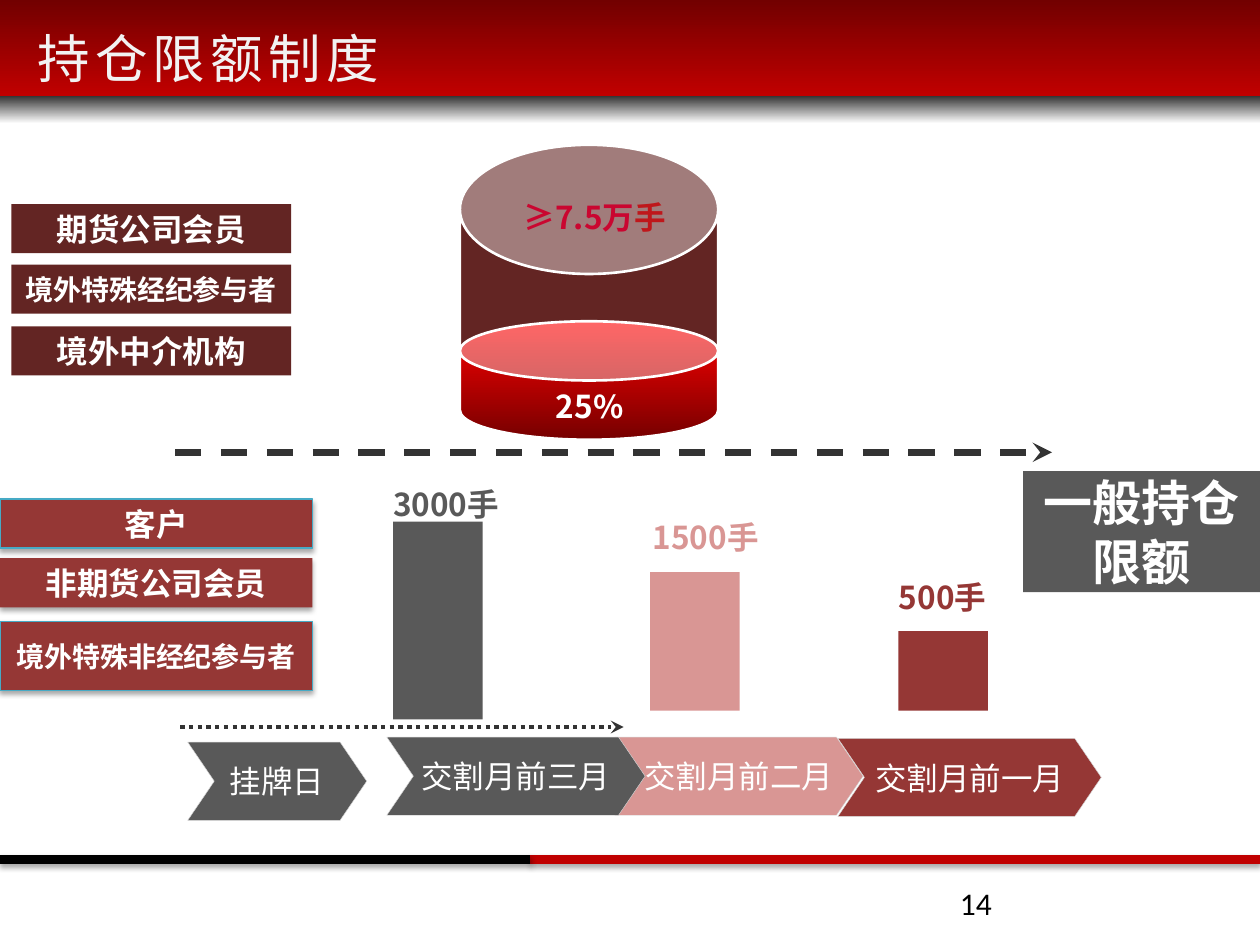
from lxml import etree
from pptx import Presentation
from pptx.dml.color import RGBColor
from pptx.enum import dml, lang, shapes, text
from pptx.oxml import parse_xml
from pptx.oxml.ns import nsdecls, qn
from pptx.util import Inches, Pt

WHITE = RGBColor(0xFF, 0xFF, 0xFF)
BLACK = RGBColor(0, 0, 0)
CHARCOAL = RGBColor(0x33, 0x33, 0x33)
GRAY = RGBColor(0x59, 0x59, 0x59)
SILVER = RGBColor(0xD7, 0xD7, 0xD7)
PALE = RGBColor(0xF2, 0xF2, 0xF2)
RED = RGBColor(0xC0, 0, 0)
BRIGHT_RED = RGBColor(0xFF, 0, 0)
DEEP_RED = RGBColor(0x72, 0, 0)
CAN_RED = RGBColor(0x76, 0, 0)
CRIMSON = RGBColor(0xCA, 0x06, 0x30)
SCARLET = RGBColor(0xBF, 0x17, 0x1B)
MAROON = RGBColor(0x63, 0x25, 0x23)
BRICK = RGBColor(0x95, 0x37, 0x35)
PINK = RGBColor(0xD9, 0x96, 0x94)
TEAL = RGBColor(0x46, 0xAA, 0xC5)
CJK = "Noto Sans CJK SC"
KIND = shapes.MSO_SHAPE
SHADOW = (f'<a:effectLst {nsdecls("a")}><a:outerShdw blurRad="39370" dist="22860" dir="5400000">'
          '<a:srgbClr val="000000"><a:alpha val="35000"/></a:srgbClr></a:outerShdw></a:effectLst>')

prs = Presentation()
prs.slide_width, prs.slide_height = Inches(10), Inches(7.5)
s = prs.slides.add_slide(prs.slide_layouts[6])


def add_box(at, fill, kind=KIND.RECTANGLE, line=None, width=0.75, adj=None, shadow=False):
    """Add a shape; a pair of colours as fill makes a top-to-bottom gradient."""
    sp = s.shapes.add_shape(kind, *map(Inches, at))
    if isinstance(fill, list):
        sp.fill.gradient()
        sp.fill.gradient_angle = 270
        for stop, color in zip(sp.fill.gradient_stops, fill):
            stop.color.rgb = color
    else:
        sp.fill.solid()
        sp.fill.fore_color.rgb = fill
    if line is None:
        sp.line.fill.background()
    else:
        sp.line.color.rgb = line
        sp.line.width = Pt(width)
    if adj is not None:
        sp.adjustments[0] = adj
    if shadow:
        sp._element.spPr.append(parse_xml(SHADOW))
    else:
        sp.shadow.inherit = False
    return sp


def add_text(runs, sp=None, at=None, size=18, bold=False, font=CJK, inset=0.1,
             align=text.PP_ALIGN.CENTER, spacing=None):
    """Write (text, colour) runs into a shape, or into a new text box at the given place."""
    if sp is None:
        sp = s.shapes.add_textbox(*map(Inches, at))
    tf = sp.text_frame
    tf.word_wrap = True
    tf.margin_left = tf.margin_right = Inches(inset)
    p = tf.paragraphs[0]
    p.alignment = align
    for words, color in runs:
        r = p.add_run()
        r.text = words
        r.font.size, r.font.bold, r.font.name = Pt(size), bold, font
        r.font.color.rgb = color
        r.font.language_id = lang.MSO_LANGUAGE_ID.SIMPLIFIED_CHINESE
        rPr = r.font._element
        ea = etree.Element(qn("a:ea"), typeface=font)
        rPr.find(qn("a:latin")).addnext(ea)
        if spacing:
            rPr.set("spc", str(spacing * 100))


# Header band and page number
add_box((0, 0.76, 10, 0.22), [CHARCOAL, WHITE])
add_box((0, 0, 10, 0.76), [DEEP_RED, RED])
add_text([("持仓限额制度", PALE)], at=(0.2, 0.16, 8.3, 0.84), size=30,
         align=text.PP_ALIGN.LEFT, spacing=3)
add_text([("14", BLACK)], at=(7.52, 6.97, 2.33, 0.4), font="Calibri", align=text.PP_ALIGN.LEFT)

# Footer rules and timeline arrows
DASH = dml.MSO_LINE
for x1, x2, y, color, width, dash in [
    (4.21, 10, 6.82, RED, 5, None),
    (0, 4.21, 6.82, BLACK, 5, None),
    (1.43, 4.95, 5.77, CHARCOAL, 2.5, DASH.ROUND_DOT),
    (1.39, 8.35, 3.59, CHARCOAL, 3.75, DASH.DASH),
]:
    cn = s.shapes.add_connector(shapes.MSO_CONNECTOR.STRAIGHT,
                                Inches(x1), Inches(y), Inches(x2), Inches(y))
    cn.line.color.rgb = color
    cn.line.width = Pt(width)
    if dash:
        cn.line.dash_style = dash
        etree.SubElement(cn.line._get_or_add_ln(), qn("a:tailEnd"), type="stealth")
        cn._element.spPr.append(parse_xml(f'<a:effectLst {nsdecls("a")}/>'))
    else:
        cn._element.spPr.append(parse_xml(SHADOW))

# Delivery stages
for label, x, y, w, color in [
    ("交割月前一月", 6.65, 5.86, 2.09, BRICK),
    ("交割月前二月", 4.88, 5.85, 1.97, PINK),
    ("交割月前三月", 3.07, 5.85, 2.05, GRAY),
    ("挂牌日", 1.49, 5.89, 1.42, GRAY),
]:
    sp = add_box((x, y, w, 0.62), color, KIND.CHEVRON, SILVER, 0.25, adj=0.34)
    add_text([(label, WHITE)], sp, inset=0)

# Limit bars with their values
for label, label_x, label_y, x, y, h, color in [
    ("3000手", 2.63, 3.8, 3.12, 4.14, 1.57, GRAY),
    ("1500手", 4.69, 4.06, 5.16, 4.54, 1.1, PINK),
    ("500手", 6.57, 4.54, 7.13, 5.01, 0.63, BRICK),
]:
    add_box((x, y, 0.71, h), color)
    add_text([(label, color)], at=(label_x, label_y, 1.82, 0.4), bold=True)

# Cylinder
add_box((3.65, 1.15, 2.05, 2.34), MAROON, KIND.CAN, WHITE, 1.5, adj=0.5)
add_box((3.65, 2.55, 2.05, 0.94), [BRIGHT_RED, CAN_RED], KIND.CAN, WHITE, 1.5, adj=0.5)
add_text([("25%", WHITE)], at=(3.77, 3.02, 1.82, 0.4), bold=True)
add_text([("≥7.5万", CRIMSON), ("手", SCARLET)], at=(3.81, 1.52, 1.82, 0.4), bold=True)

# Participant labels
for label, y, size in [("期货公司会员", 1.62, 18), ("境外特殊经纪参与者", 2.1, 16),
                       ("境外中介机构", 2.59, 18)]:
    add_text([(label, WHITE)], add_box((0.09, y, 2.22, 0.39), MAROON), size=size, bold=True)
for label, y, h, size, line in [("客户", 3.96, 0.39, 18, TEAL),
                                ("非期货公司会员", 4.43, 0.39, 18, None),
                                ("境外特殊非经纪参与者", 4.93, 0.55, 16, TEAL)]:
    sp = add_box((0, y, 2.48, h), BRICK, line=line, shadow=True)
    add_text([(label, WHITE)], sp, size=size, bold=True)
add_text([("一般持仓限额", WHITE)], add_box((8.12, 3.74, 1.88, 0.96), GRAY), size=28, bold=True)

prs.save("out.pptx")
